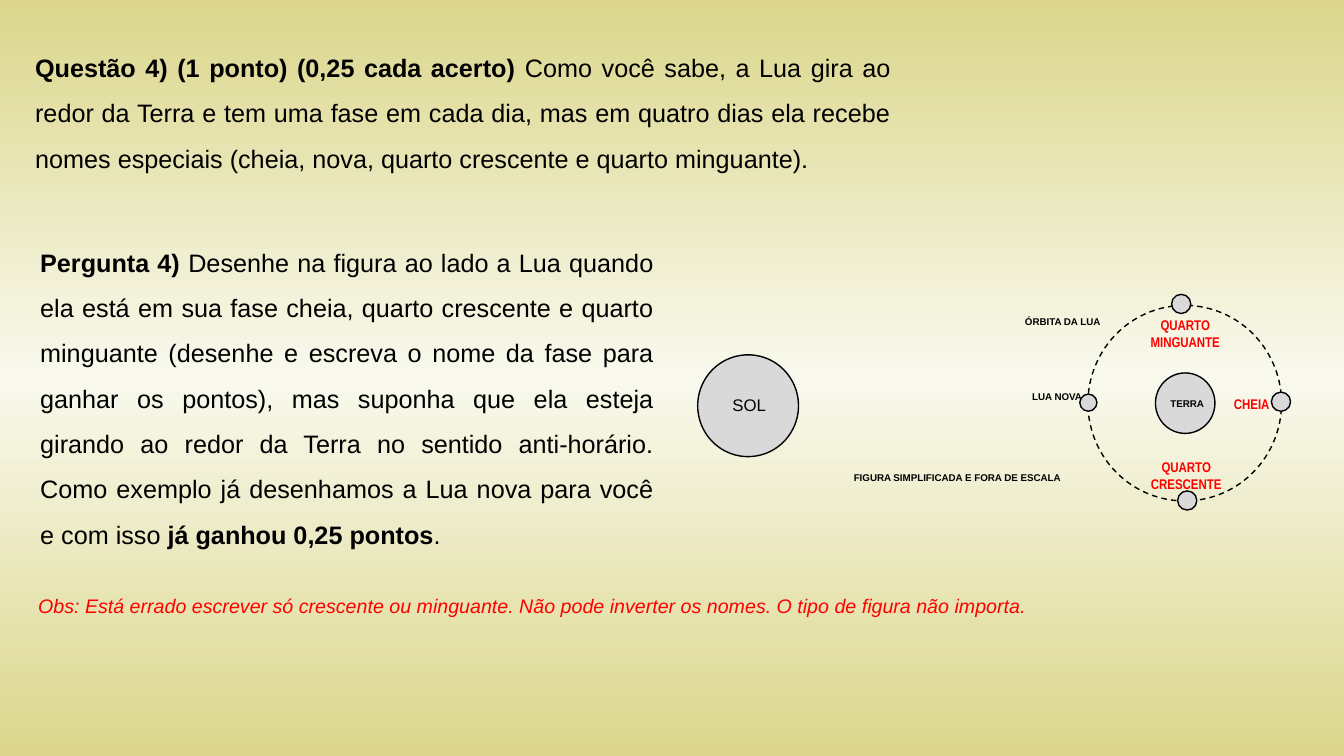
from copy import deepcopy
from typing import NamedTuple, Optional

from pptx import Presentation
from pptx.dml.color import RGBColor
from pptx.enum.dml import MSO_LINE
from pptx.enum.shapes import MSO_SHAPE
from pptx.enum.text import MSO_AUTO_SIZE, PP_ALIGN as AL
from pptx.oxml.ns import qn
from pptx.util import Inches, Pt

COLORS = {
    "olive": "DBD68B",
    "cream": "F9F9EE",
    "black": "000000",
    "grey": "D9D9D9",
    "red": "FF0000",
}


class Box(NamedTuple):
    left: float
    top: float
    width: float
    height: float


class Run(NamedTuple):
    text: str
    bold: bool = False


class Disc(NamedTuple):
    box: Box
    fill: Optional[str] = "grey"
    dashed: bool = False


class Label(NamedTuple):
    text: str
    box: Box
    align: AL = AL.LEFT
    size: int = 7
    bold: bool = True
    color: str = "black"
    font: str = "Arial"


def rgb(name: str) -> RGBColor:
    return RGBColor.from_string(COLORS[name])


def paint_background(slide) -> None:
    """Vertical gradient: olive, cream, olive."""
    fill = slide.background.fill
    fill.gradient()
    fill.gradient_angle = 270
    stop_list = slide.element.find(".//" + qn("a:gsLst"))
    stop_list.insert(1, deepcopy(stop_list[0]))
    stops = zip(fill.gradient_stops, (0, 0.5, 1), ("olive", "cream", "olive"))
    for stop, position, color in stops:
        stop.position = position
        stop.color.rgb = rgb(color)


def add_disc(slide, disc: Disc) -> None:
    sp = slide.shapes.add_shape(MSO_SHAPE.OVAL, *map(Inches, disc.box))
    sp.shadow.inherit = False
    if disc.fill:
        sp.fill.solid()
        sp.fill.fore_color.rgb = rgb(disc.fill)
    else:
        sp.fill.background()
    sp.line.color.rgb = rgb("black")
    sp.line.width = Pt(1)
    if disc.dashed:
        sp.line.dash_style = MSO_LINE.DASH


def add_text(slide, box: Box, paragraphs: list[list[Run]], *, size: int,
             font: str = "Arial", color: str = "black", italic: bool = False,
             align: AL = AL.LEFT, spacing: float = 1.0) -> None:
    tf = slide.shapes.add_textbox(*map(Inches, box)).text_frame
    tf.word_wrap = True
    tf.auto_size = MSO_AUTO_SIZE.NONE
    for i, runs in enumerate(paragraphs):
        p = tf.add_paragraph() if i else tf.paragraphs[0]
        p.alignment = align
        p.line_spacing = spacing
        for run in runs:
            r = p.add_run()
            r.text = run.text
            r.font.name = font
            r.font.size = Pt(size)
            r.font.bold = run.bold
            r.font.italic = italic
            r.font.color.rgb = rgb(color)


def add_label(slide, label: Label) -> None:
    lines = [[Run(line, label.bold)] for line in label.text.split("\n")]
    add_text(slide, label.box, lines, size=label.size, font=label.font,
             color=label.color, align=label.align)


def phase(text: str, box: Box, align: AL = AL.CENTER) -> Label:
    return Label(text, box, align, size=10, color="red", font="Arial Narrow")


MOON = 0.19
DISCS = [
    Disc(Box(10.79, 3.03, 1.92, 1.94), fill=None, dashed=True),  # orbit
    Disc(Box(11.46, 3.7, 0.59, 0.6)),  # Earth
    Disc(Box(6.92, 3.52, 1, 1.01)),  # Sun
    Disc(Box(10.71, 3.91, 0.17, 0.17)),  # new moon
    *(Disc(Box(x, y, MOON, MOON))
      for x, y in ((11.68, 4.87), (11.62, 2.92), (12.61, 3.89))),
]

LABELS = [
    Label("SOL", Box(7.02, 3.87, 0.82, 0.42), AL.CENTER, size=12, bold=False),
    Label("TERRA", Box(11.51, 3.9, 0.82, 0.42)),
    Label("LUA NOVA", Box(9.75, 3.83, 1.08, 0.42), AL.RIGHT),
    Label("ÓRBITA DA LUA", Box(9.82, 3.08, 1.44, 0.42), AL.CENTER),
    Label("FIGURA SIMPLIFICADA E FORA DE ESCALA", Box(8.37, 4.63, 2.34, 0.29)),
    phase("QUARTO\nCRESCENTE", Box(11.28, 4.5, 0.97, 0.44)),
    phase("CHEIA", Box(12.14, 3.87, 0.57, 0.27), AL.LEFT),
    phase("QUARTO\nMINGUANTE", Box(11.29, 3.09, 0.93, 0.44)),
]

INTRO = [
    Run("Questão 4) (1 ponto) (0,25 cada acerto) ", True),
    Run("Como você sabe, a Lua gira ao redor da Terra e tem uma fase em cada "
        "dia, mas em quatro dias ela recebe nomes especiais (cheia, nova, "
        "quarto crescente e quarto minguante)."),
]
QUESTION = [
    Run("Pergunta 4) ", True),
    Run("Desenhe na figura ao lado a Lua quando ela está em sua fase cheia, "
        "quarto crescente e quarto minguante (desenhe e escreva o nome da "
        "fase para ganhar os pontos), mas suponha que ela esteja girando ao "
        "redor da Terra no sentido anti-horário. Como exemplo já desenhamos "
        "a Lua nova para você e com isso "),
    Run("já ganhou 0,25 pontos", True),
    Run("."),
]
NOTE = [Run("Obs: Está errado escrever só crescente ou minguante. Não pode "
            "inverter os nomes. O tipo de figura não importa.")]


def main() -> None:
    prs = Presentation()
    prs.slide_width, prs.slide_height = Inches(13.33), Inches(7.5)
    slide = prs.slides.add_slide(prs.slide_layouts[6])
    paint_background(slide)

    # Question text
    for box, runs in ((Box(0.25, 0.32, 8.68, 1.46), INTRO),
                      (Box(0.3, 2.25, 6.28, 3.23), QUESTION)):
        add_text(slide, box, [runs], size=18, align=AL.JUSTIFY, spacing=1.5)
    add_text(slide, Box(0.28, 5.84, 10.78, 0.34), [NOTE], size=14,
             color="red", italic=True)

    # Moon phase diagram
    for disc in DISCS:
        add_disc(slide, disc)
    for label in LABELS:
        add_label(slide, label)

    prs.save("out.pptx")


if __name__ == "__main__":
    main()
